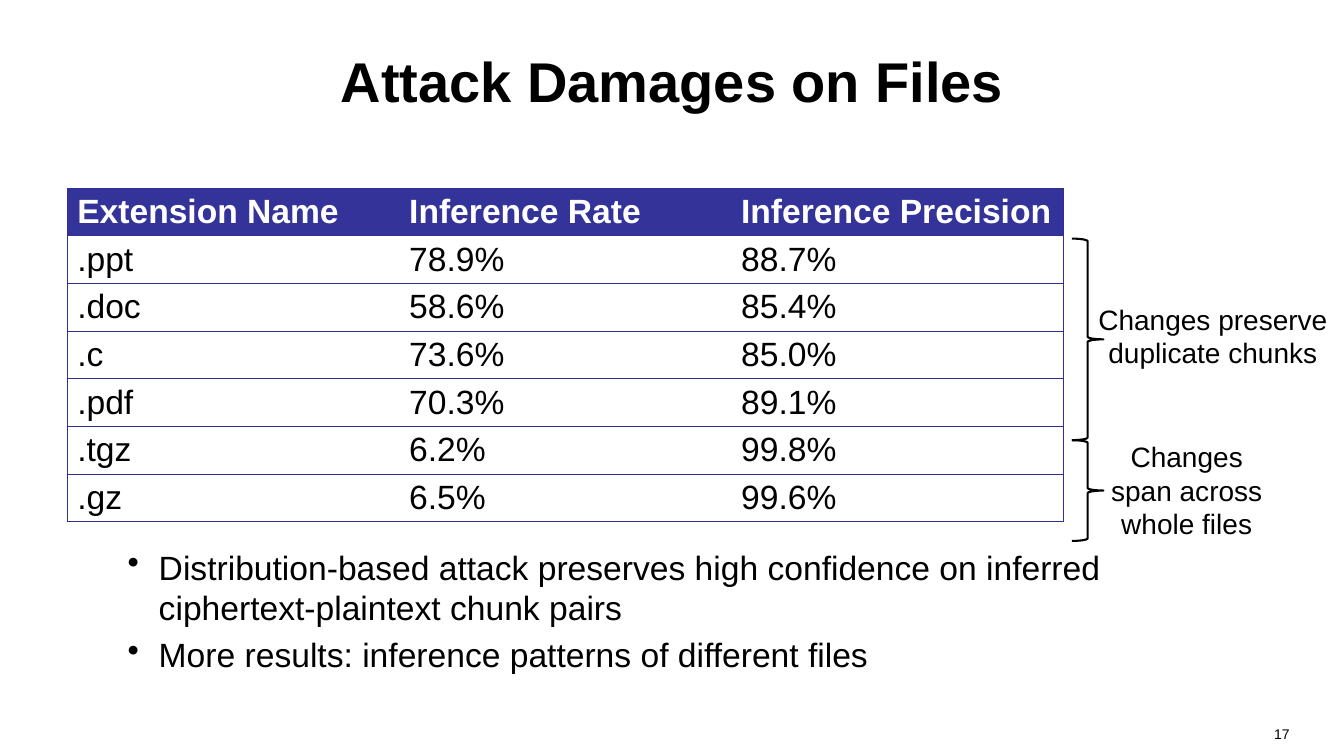
"""Build the slide on attack damages per file type."""
import dataclasses

import lxml.etree
import pptx
import pptx.dml.color
import pptx.enum.shapes
import pptx.enum.text
import pptx.oxml.ns
import pptx.util

ALIGN = pptx.enum.text.PP_ALIGN
ANCHOR = pptx.enum.text.MSO_ANCHOR


@dataclasses.dataclass(frozen=True)
class Theme:
    """Colours, type sizes and line widths."""
    font: str = "Arial"
    ink: str = "000000"
    paper: str = "FFFFFF"
    header: str = "333399"
    rule: str = "2F2F98"
    title: int = 40
    body: int = 24
    label: int = 20
    number: int = 10
    rule_width: float = 0.75
    brace_width: float = 1.5


class SlideBuilder:
    """Place styled elements on a grid of 20 columns and 30 rows."""

    def __init__(self, deck, theme):
        """Add a title-only slide to the deck."""
        self.theme = theme
        self.slide = deck.slides.add_slide(deck.slide_layouts[5])
        self.column = deck.slide_width / 20
        self.row = deck.slide_height / 30

    def box(self, left, top, width, height):
        """Turn columns and rows into lengths."""
        return (round(left * self.column), round(top * self.row),
                round(width * self.column), round(height * self.row))

    def style(self, paragraph, size, color, bold=False, align=ALIGN.LEFT):
        """Format a paragraph and its runs."""
        paragraph.alignment = align
        for run in paragraph.runs:
            run.font.name = self.theme.font
            run.font.size = pptx.util.Pt(size)
            run.font.bold = bold
            run.font.color.rgb = pptx.dml.color.RGBColor.from_string(color)

    def title(self, text, *place):
        """Fill and move the title placeholder."""
        heading = self.slide.shapes.title
        heading.left, heading.top, heading.width, heading.height = self.box(*place)
        heading.text_frame.text = text
        heading.text_frame.vertical_anchor = ANCHOR.MIDDLE
        self.style(heading.text_frame.paragraphs[0], self.theme.title,
                   self.theme.ink, True, ALIGN.CENTER)

    def text(self, text, size, align, *place):
        """Add a wrapped text box and return its frame."""
        frame = self.slide.shapes.add_textbox(*self.box(*place)).text_frame
        frame.word_wrap = True
        frame.text = text
        for paragraph in frame.paragraphs:
            self.style(paragraph, size, self.theme.ink, align=align)
        return frame

    def bullets(self, points, *place):
        """Add a bulleted list with hanging indents."""
        frame = self.text("\n".join(points), self.theme.body, ALIGN.LEFT, *place)
        for paragraph in frame.paragraphs:
            paragraph.space_before = pptx.util.Pt(0.2 * self.theme.body)
            properties = paragraph._p.get_or_add_pPr()
            properties.set("marL", str(pptx.util.Inches(0.81)))
            properties.set("indent", str(-pptx.util.Inches(0.31)))
            lxml.etree.SubElement(properties, pptx.oxml.ns.qn("a:buChar"), char="•")

    def brace(self, *place):
        """Add a right brace."""
        brace = self.slide.shapes.add_shape(
            pptx.enum.shapes.MSO_SHAPE.RIGHT_BRACE, *self.box(*place))
        brace.shadow.inherit = False
        brace.fill.background()
        brace.line.color.rgb = pptx.dml.color.RGBColor.from_string(self.theme.ink)
        brace.line.width = pptx.util.Pt(self.theme.brace_width)

    def border(self, cell, edge, visible):
        """Draw or clear one cell edge."""
        qn = pptx.oxml.ns.qn
        line = lxml.etree.SubElement(
            cell._tc.get_or_add_tcPr(), qn(f"a:ln{edge}"),
            w=str(pptx.util.Pt(self.theme.rule_width)))
        if visible:
            fill = lxml.etree.SubElement(line, qn("a:solidFill"))
            lxml.etree.SubElement(fill, qn("a:srgbClr"), val=self.theme.rule)
        else:
            lxml.etree.SubElement(line, qn("a:noFill"))

    def table(self, rows, *place):
        """Add a table with a filled header and horizontal rules."""
        last = len(rows[0]) - 1
        table = self.slide.shapes.add_table(
            len(rows), last + 1, *self.box(*place)).table
        table.horz_banding = False
        for r, values in enumerate(rows):
            fill, ink = ((self.theme.paper, self.theme.ink) if r
                         else (self.theme.header, self.theme.paper))
            for c, value in enumerate(values):
                cell = table.cell(r, c)
                for edge, visible in (("L", c == 0), ("R", c == last),
                                      ("T", True), ("B", True)):
                    self.border(cell, edge, visible)
                cell.fill.solid()
                cell.fill.fore_color.rgb = pptx.dml.color.RGBColor.from_string(fill)
                cell.text_frame.text = value
                self.style(cell.text_frame.paragraphs[0], self.theme.body, ink, r == 0)


def main():
    """Build and save the slide."""
    deck = pptx.Presentation()
    deck.slide_width = pptx.util.Inches(13.33)
    deck.slide_height = pptx.util.Inches(7.5)
    theme = Theme()
    page = SlideBuilder(deck, theme)

    page.title("Attack Damages on Files", 1, 0.67, 18, 5)
    damages = [
        ("Extension Name", "Inference Rate", "Inference Precision"),
        (".ppt", "78.9%", "88.7%"),
        (".doc", "58.6%", "85.4%"),
        (".c", "73.6%", "85.0%"),
        (".pdf", "70.3%", "89.1%"),
        (".tgz", "6.2%", "99.8%"),
        (".gz", "6.5%", "99.6%"),
    ]
    page.table(damages, 1, 7.47, 14.82, 1.89 * len(damages))
    page.text("17", theme.number, ALIGN.RIGHT, 14.67, 28.6, 4.67, 1.4)

    groups = [
        (9.47, 8, "Changes preserve duplicate chunks", (16.1, 11.8, 3.9, 3.08)),
        (17.47, 4, "Changes span across whole files", (16.23, 17.25, 2.86, 4.44)),
    ]
    for top, height, label, place in groups:
        page.brace(15.95, top, 0.47, height)
        page.text(label, theme.label, ALIGN.CENTER, *place)

    page.bullets([
        "Distribution-based attack preserves high confidence on inferred "
        "ciphertext-plaintext chunk pairs",
        "More results: inference patterns of different files",
    ], 1, 21.5, 17.5, 5.3)
    deck.save("out.pptx")


if __name__ == "__main__":
    main()
